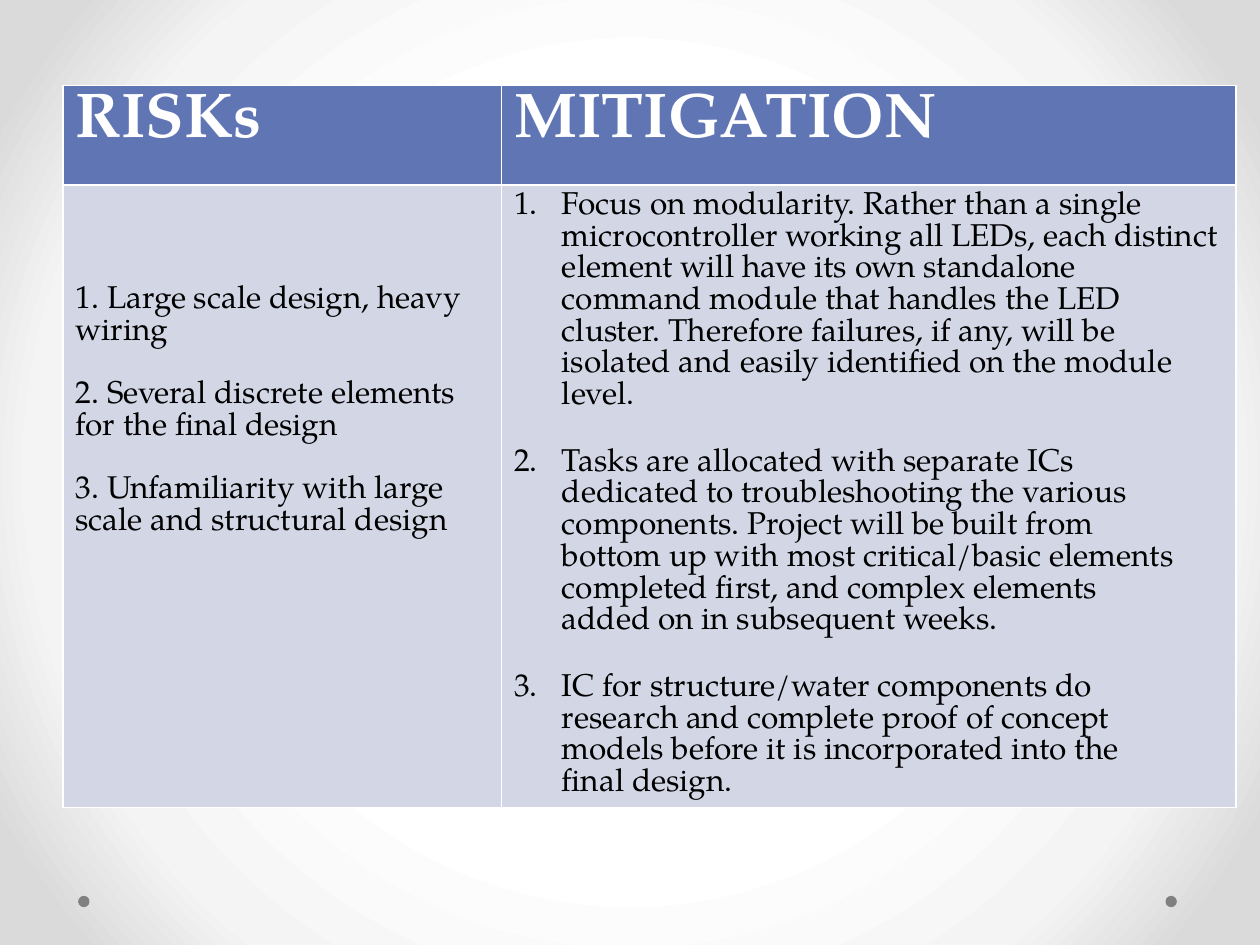
import pptx
import pptx.dml.color
import pptx.enum.shapes
import pptx.oxml.ns
import pptx.oxml.xmlchemy
import pptx.util
from lxml import etree

Inches = pptx.util.Inches
Pt = pptx.util.Pt
RGB = pptx.dml.color.RGBColor.from_string
qn = pptx.oxml.ns.qn
OxmlElement = pptx.oxml.xmlchemy.OxmlElement

FONT = "TeX Gyre Pagella"
COLORS = {"header": "6076B4", "body": "D2D6E5", "white": "FFFFFF", "black": "000000", "dot": "808080"}
BACKGROUND_STOPS = [(50, "FFFFFF"), (76, "F4F4F4"), (92, "DADADA")]
HEADERS = ["RISKs", "MITIGATION"]
RISKS = [
    "1. Large scale design, heavy wiring",
    "2. Several discrete elements for the final design",
    "3. Unfamiliarity with large scale and structural design",
]
MITIGATIONS = [
    "Focus on modularity. Rather than a single microcontroller working all LEDs, each distinct "
    "element will have its own standalone command module that handles the LED cluster. "
    "Therefore failures, if any, will be isolated and easily identified on the module level.",
    "Tasks are allocated with separate ICs\vdedicated to troubleshooting the various\v"
    "components. Project will be built from\vbottom up with most critical/basic elements\v"
    "completed first, and complex elements\vadded on in subsequent weeks.",
    "IC for structure/water components do\vresearch and complete proof of concept\v"
    "models before it is incorporated into the\vfinal design.",
]


def fill_cell(cell, texts, fill, color, size, bold, gap):
    cell.fill.solid()
    cell.fill.fore_color.rgb = RGB(COLORS[fill])
    cell.text_frame.text = "\n".join(texts)
    for index, para in enumerate(cell.text_frame.paragraphs):
        para.font.name = FONT
        para.font.size = Pt(size)
        para.font.bold = bold
        para.font.color.rgb = RGB(COLORS[color])
        para.space_before = Pt(gap if index else 0)


def number_paragraph(para, number):
    properties = para._p.get_or_add_pPr()
    properties.set("marL", str(Inches(0.38)))
    properties.set("indent", str(-Inches(0.38)))
    bullet = OxmlElement("a:buAutoNum")
    bullet.set("type", "arabicPeriod")
    bullet.set("startAt", str(number))
    properties.insert_element_before(bullet, "a:tabLst", "a:defRPr", "a:extLst")


deck = pptx.Presentation()
deck.slide_width = Inches(10)
deck.slide_height = Inches(7.5)
page = deck.slides.add_slide(deck.slide_layouts[6])

page.background.fill.solid()
background = page.element.find(".//" + qn("p:bgPr"))
background.remove(background.find(qn("a:solidFill")))
gradient = OxmlElement("a:gradFill")
background.insert(0, gradient)
stops = etree.SubElement(gradient, qn("a:gsLst"))
for position, color in BACKGROUND_STOPS:
    stop = etree.SubElement(stops, qn("a:gs"), pos=str(position * 1000))
    etree.SubElement(stop, qn("a:srgbClr"), val=color)
circle = etree.SubElement(gradient, qn("a:path"), attrib={"path": "circle"})
etree.SubElement(circle, qn("a:fillToRect"), l="50000", t="50000", r="50000", b="50000")

for left in (9.25, 0.62):
    dot = page.shapes.add_shape(
        pptx.enum.shapes.MSO_SHAPE.OVAL, Inches(left), Inches(7.11), Inches(0.09), Inches(0.09))
    dot.shadow.inherit = False
    dot.fill.solid()
    dot.fill.fore_color.rgb = RGB(COLORS["dot"])
    dot.line.fill.background()

table = page.shapes.add_table(2, 2, Inches(0.5), Inches(0.68), Inches(9.31), Inches(5.73)).table
for column, width in zip(table.columns, (3.48, 5.83)):
    column.width = Inches(width)
for row, height in zip(table.rows, (0.79, 4.94)):
    row.height = Inches(height)

for column, header in enumerate(HEADERS):
    fill_cell(table.cell(0, column), [header], "header", "white", 36, True, 0)

risk_cell = table.cell(1, 0)
fill_cell(risk_cell, RISKS, "body", "black", 18, False, 18)
risk_cell.margin_top = Inches(0.8)

mitigation_cell = table.cell(1, 1)
fill_cell(mitigation_cell, MITIGATIONS, "body", "black", 18, False, 20)
for number, para in enumerate(mitigation_cell.text_frame.paragraphs, start=1):
    number_paragraph(para, number)

deck.save("out.pptx")
